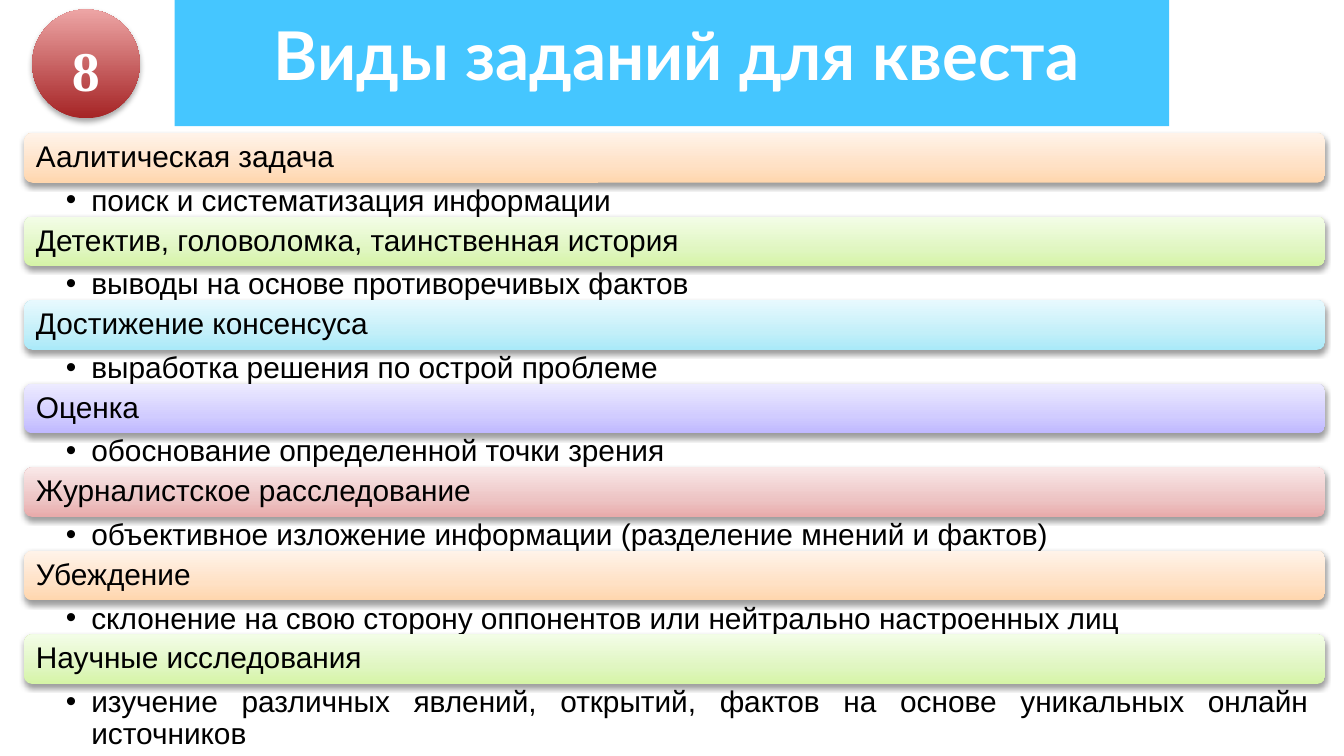
from lxml.etree import SubElement
from pptx import Presentation
from pptx.dml.color import RGBColor
from pptx.enum.shapes import MSO_SHAPE as Shape
from pptx.enum.text import MSO_ANCHOR as Anchor, PP_ALIGN as Align
from pptx.oxml import parse_xml
from pptx.oxml.ns import nsdecls, qn
from pptx.util import Inches, Pt

TITLE = "Виды заданий для квеста"
NUMBER = "8"
TASKS = [
    ("Аалитическая задача", "поиск и систематизация информации"),
    ("Детектив, головоломка, таинственная история", "выводы на основе противоречивых фактов"),
    ("Достижение консенсуса", "выработка решения по острой проблеме"),
    ("Оценка", "обоснование определенной точки зрения"),
    ("Журналистское расследование", "объективное изложение информации (разделение мнений и фактов)"),
    ("Убеждение", "склонение на свою сторону оппонентов или нейтрально настроенных лиц"),
    ("Научные исследования", "изучение различных явлений, открытий, фактов на основе уникальных онлайн источников"),
]
THEME = {
    "banner": "00B2FF",
    "white": "FFFFFF",
    "black": "000000",
    "badge": [(0, "A52425"), (100, "EDA5A5")],
    "bars": [
        [(0, "FFD6AD"), (35, "FFE1C5"), (100, "FFF3E9")],
        [(0, "D5F4A6"), (35, "E0F6C1"), (100, "F3FDE7")],
        [(0, "A9E9F9"), (35, "C3EFF9"), (100, "E7F9FE")],
        [(0, "BFB8FF"), (35, "D1CCFF"), (100, "EDEBFF")],
        [(0, "E8AAAA"), (35, "EDC4C4"), (100, "F9E8E8")],
    ],
    "title": ("Lato", 36),
    "number": ("Times New Roman", 30),
    "body": ("Arial", 16),
}
LEFT, WIDTH = 0.18, 9.68
FIRST_TOP, LAST_TOP = 0.99, 4.72
BAR_HEIGHT, NOTE_HEIGHT, LAST_NOTE_HEIGHT = 0.37, 0.25, 0.47


def add_bullet(para, style):
    properties = para._p.get_or_add_pPr()
    properties.set("marL", str(Inches(0.19)))
    properties.set("indent", str(-Inches(0.19)))
    color = SubElement(properties, qn("a:buClr"))
    SubElement(color, qn("a:srgbClr"), val=THEME["black"])
    SubElement(properties, qn("a:buFont"), typeface=style[0])
    SubElement(properties, qn("a:buChar"), char="•")
    para.level = 1
    para.font.size = Pt(style[1])
    SubElement(para._p, qn("a:endParaRPr"), sz=str(style[1] * 100))


def add_text(shape, text, style, color, insets, anchor=Anchor.TOP,
             align=Align.LEFT, spacing=None, bold=False, bullet=False):
    frame = shape.text_frame
    frame.word_wrap = True
    frame.vertical_anchor = anchor
    frame.margin_left, frame.margin_top, frame.margin_right, frame.margin_bottom = map(Inches, insets)
    para = frame.paragraphs[0]
    if bullet:
        add_bullet(para, style)
    para.alignment = align
    if spacing:
        para.line_spacing = spacing
    span = para.add_run()
    span.text = text
    span.font.name, size = style
    span.font.size = Pt(size)
    span.font.bold = bold
    span.font.color.rgb = RGBColor.from_string(color)


def add_glossy(slide, kind, place, stops, shade, distance):
    shape = slide.shapes.add_shape(kind, *map(Inches, place))
    shape.line.fill.background()
    marks = "".join(
        f'<a:gs pos="{position * 1000}"><a:srgbClr val="{color}"/></a:gs>' for position, color in stops)
    gradient = parse_xml(
        f'<a:gradFill {nsdecls("a")} rotWithShape="1"><a:gsLst>{marks}</a:gsLst>'
        '<a:lin ang="16200000" scaled="0"/></a:gradFill>')
    shadow = parse_xml(
        f'<a:effectLst {nsdecls("a")}><a:outerShdw blurRad="{Pt(3.1)}" dist="{Pt(distance)}" '
        f'dir="5400000" rotWithShape="0"><a:srgbClr val="{THEME["black"]}">'
        f'<a:alpha val="{shade * 1000}"/></a:srgbClr></a:outerShdw></a:effectLst>')
    outline = shape._element.spPr.find(qn("a:ln"))
    outline.addprevious(gradient)
    outline.addnext(shadow)
    return shape


def add_header(slide):
    banner = slide.shapes.add_shape(Shape.RECTANGLE, *map(Inches, (1.3, 0, 7.4, 0.94)))
    banner.shadow.inherit = False
    banner.line.fill.background()
    banner.fill.solid()
    banner.fill.fore_color.rgb = RGBColor.from_string(THEME["banner"])
    color = banner._element.spPr.find(qn("a:solidFill"))[0]
    SubElement(color, qn("a:alpha"), val="73000")

    title = slide.shapes.title
    banner._element.addnext(title._element)
    title.left, title.top, title.width, title.height = map(Inches, (0.91, 0, 8.25, 0.94))
    add_text(title, TITLE, THEME["title"], THEME["white"], (0.1,) * 4,
             align=Align.CENTER, bold=True)


def add_tasks(slide):
    pitch = (LAST_TOP - FIRST_TOP) / (len(TASKS) - 1)
    for index, (name, note) in enumerate(TASKS):
        top = FIRST_TOP + index * pitch
        stops = THEME["bars"][index % len(THEME["bars"])]
        bar = add_glossy(slide, Shape.ROUNDED_RECTANGLE, (LEFT, top, WIDTH, BAR_HEIGHT), stops, 38, 1.6)
        add_text(bar, name, THEME["body"], THEME["black"], (0.07,) * 4, Anchor.MIDDLE, spacing=0.9)

        height = LAST_NOTE_HEIGHT if index == len(TASKS) - 1 else NOTE_HEIGHT
        box = slide.shapes.add_textbox(*map(Inches, (LEFT, top + BAR_HEIGHT, WIDTH, height)))
        add_text(box, note, THEME["body"], THEME["black"], (0.31, 0.02, 0.12, 0.02),
                 align=Align.JUSTIFY, spacing=0.9, bullet=True)


def main():
    deck = Presentation()
    deck.slide_width = Inches(10)
    deck.slide_height = deck.slide_width * 9 // 16
    page = deck.slides.add_slide(deck.slide_layouts[5])
    add_header(page)
    add_tasks(page)
    badge = add_glossy(page, Shape.OVAL, (0.24, 0.07, 0.8, 0.81), THEME["badge"], 35, 1.8)
    add_text(badge, NUMBER, THEME["number"], THEME["white"], (0.07, 0.04, 0.07, 0.04),
             Anchor.MIDDLE, Align.CENTER, 1.15, bold=True)
    deck.save("out.pptx")


if __name__ == "__main__":
    main()
